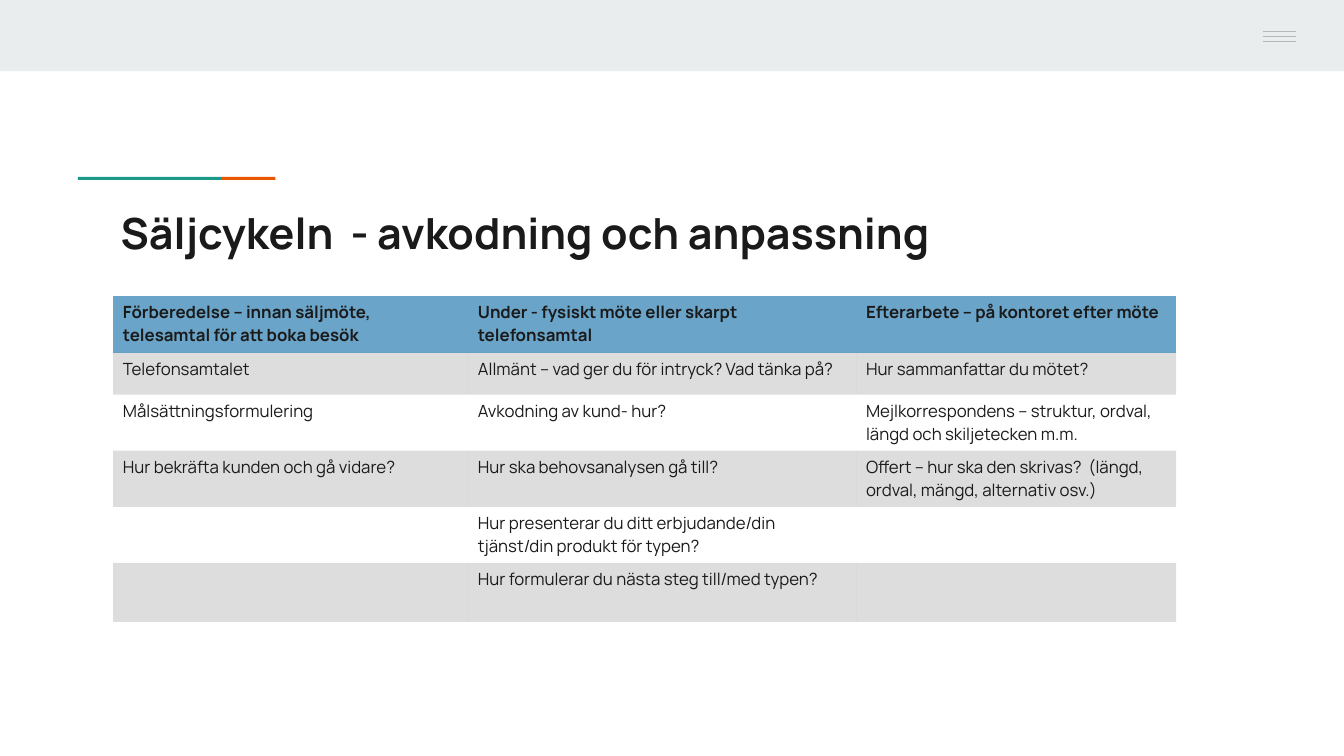
from lxml import etree
from pptx import Presentation
from pptx.dml.color import RGBColor
from pptx.enum import shapes, text
from pptx.oxml import ns
from pptx.util import Pt

BAND = RGBColor(0xE9, 0xED, 0xEE)
TEAL = RGBColor(0x1A, 0x99, 0x88)
ORANGE = RGBColor(0xEB, 0x56, 0x00)
RULE = RGBColor(0xB7, 0xB7, 0xB7)
INK = RGBColor(0x1A, 0x1A, 0x1A)
HEADER = RGBColor(0x6A, 0xA4, 0xC8)
STRIPE = RGBColor(0x59, 0x59, 0x59)

NO_STYLE = "{2D5ABB26-0587-4C30-8999-92F81FD0307C}"
COLUMNS = [190.2, 207.9, 171.4]
ROWS = [30.3, 22.4, 30, 30, 30, 31.5]
CELLS = [
    ["Förberedelse – innan säljmöte, telesamtal för att boka besök",
     "Under - fysiskt möte eller skarpt telefonsamtal",
     "Efterarbete – på kontoret efter möte"],
    ["Telefonsamtalet",
     "Allmänt – vad ger du för intryck? Vad tänka på?",
     "Hur sammanfattar du mötet?"],
    ["Målsättningsformulering",
     "Avkodning av kund- hur?",
     "Mejlkorrespondens – struktur, ordval, längd och skiljetecken m.m."],
    ["Hur bekräfta kunden och gå vidare?",
     "Hur ska behovsanalysen gå till?",
     "Offert – hur ska den skrivas?  (längd, ordval, mängd, alternativ osv.)"],
    ["", "Hur presenterar du ditt erbjudande/din tjänst/din produkt för typen?", ""],
    ["", "Hur formulerar du nästa steg till/med typen?", ""],
]


def apply(obj, formats):
    for name, value in formats.items():
        setattr(obj, name, value)


def write(p, wording, size, bold):
    r = p.add_run()
    r.text = wording
    apply(r.font, {"name": "Manrope", "size": Pt(size), "bold": bold})
    r.font.color.rgb = INK


def add_block(s, x, y, w, h, color):
    sp = s.shapes.add_shape(shapes.MSO_SHAPE.RECTANGLE, Pt(x), Pt(y), Pt(w), Pt(h))
    sp.shadow.inherit = False
    sp.fill.solid()
    sp.fill.fore_color.rgb = color
    sp.line.fill.background()


def add_top_band(s, x, y, w, h):
    add_block(s, x, y, w, h, BAND)
    menu_w, icon_w, gap = 67.7, 17.3, 2.7
    menu_x = x + w - menu_w
    add_block(s, menu_x, y, menu_w, 36, BAND)
    icon_x = menu_x + 24.5
    for i in range(3):
        line_y = y + 17 + i * gap
        line = s.shapes.add_connector(
            shapes.MSO_CONNECTOR.STRAIGHT,
            Pt(icon_x), Pt(line_y), Pt(icon_x + icon_w), Pt(line_y))
        line.line.color.rgb = RULE
        line.line.width = Pt(0.75)
        etree.SubElement(line.element.spPr, ns.qn("a:effectLst"))


def add_accent(s, x, y, w, h):
    split = w * 0.73
    add_block(s, x + split, y, w - split, h, ORANGE)
    add_block(s, x, y, split, h, TEAL)


def add_title(s, x, y, w, h):
    tf = s.shapes.add_textbox(Pt(x), Pt(y), Pt(w), Pt(h)).text_frame
    apply(tf, {"word_wrap": True, "vertical_anchor": text.MSO_ANCHOR.TOP,
               "margin_left": Pt(7.2), "margin_right": Pt(7.2),
               "margin_top": Pt(7.2), "margin_bottom": Pt(7.2)})
    write(tf.paragraphs[0], "Säljcykeln  - avkodning och anpassning", 23, True)


def add_cycle_table(s, x, y, w, h):
    frame = s.shapes.add_table(len(ROWS), len(COLUMNS), Pt(x), Pt(y), Pt(w), Pt(h))
    table = frame.table
    apply(table, {"first_row": False, "horz_banding": False})
    next(frame.element.iter(ns.qn("a:tableStyleId"))).text = NO_STYLE
    for column, share in zip(table.columns, COLUMNS):
        column.width = Pt(w * share / sum(COLUMNS))
    for row, share in zip(table.rows, ROWS):
        row.height = Pt(h * share / sum(ROWS))
    for i, wordings in enumerate(CELLS):
        for j, wording in enumerate(wordings):
            cell = table.cell(i, j)
            apply(cell, {"margin_left": Pt(5.3), "margin_right": Pt(5.3),
                         "margin_top": Pt(2.65), "margin_bottom": Pt(2.65)})
            if i == 0 or i % 2:
                cell.fill.solid()
                cell.fill.fore_color.rgb = STRIPE if i else HEADER
            else:
                cell.fill.background()
            p = cell.text_frame.paragraphs[0]
            if wording:
                write(p, wording, 9, i == 0)
            else:
                p.font.size = Pt(9)
    for color in frame.element.iter(ns.qn("a:srgbClr")):
        if color.get("val") == str(STRIPE):
            etree.SubElement(color, ns.qn("a:alpha"), val="20000")


def main():
    prs = Presentation()
    apply(prs, {"slide_width": Pt(720), "slide_height": Pt(405)})
    s = prs.slides.add_slide(prs.slide_layouts[6])
    add_top_band(s, 0, 0, 720, 38.2)
    add_accent(s, 41.8, 94.8, 105.7, 1.6)
    add_cycle_table(s, 60.6, 158.5, 569.5, 174.8)
    add_title(s, 57.6, 103.7, 605.5, 42.5)
    prs.save("out.pptx")


if __name__ == "__main__":
    main()
